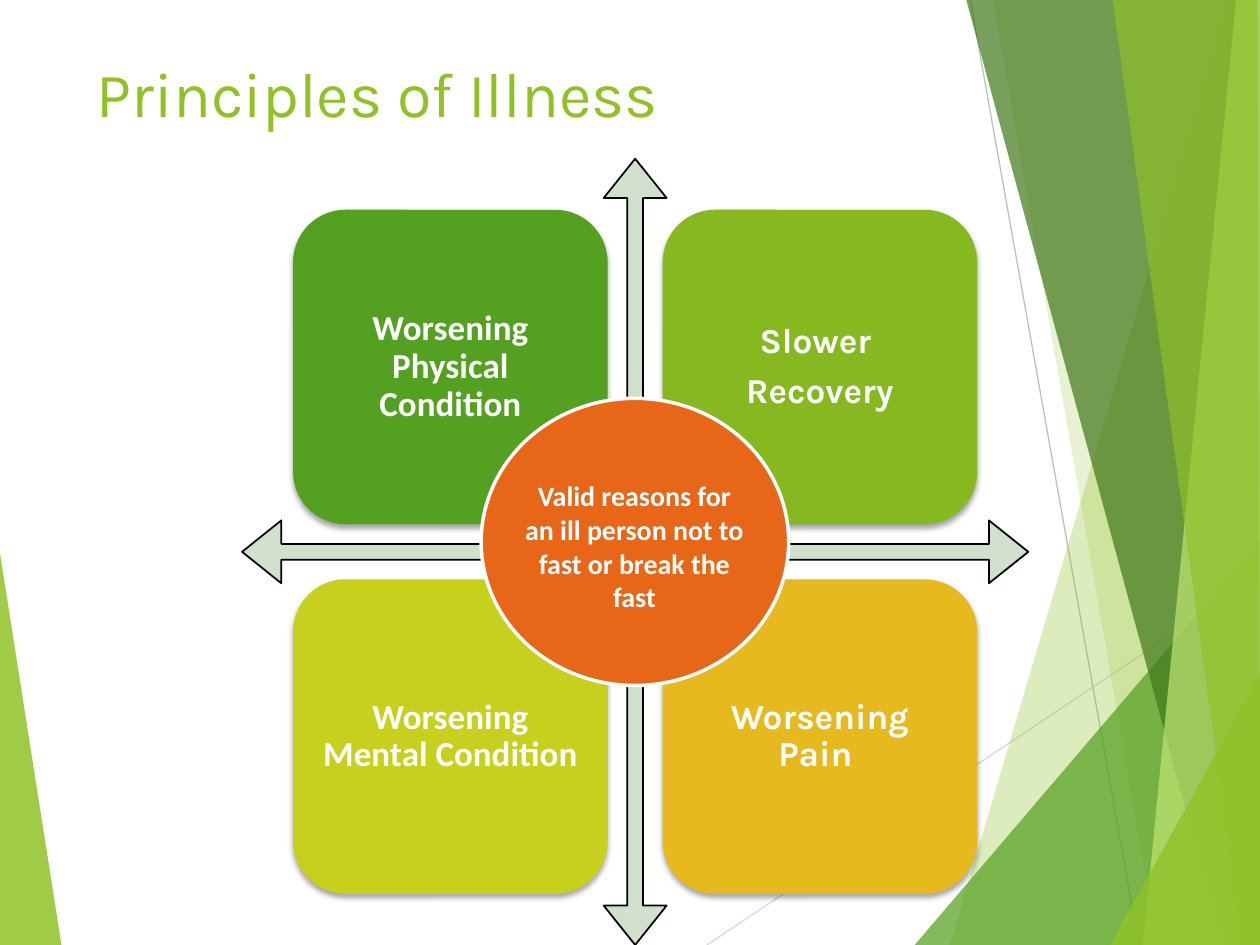
import collections
import pptx
import pptx.dml.color
import pptx.enum.shapes
import pptx.enum.text
import pptx.oxml.ns
import pptx.util
import lxml.etree

Cm = pptx.util.Cm
RGBColor = pptx.dml.color.RGBColor
SHAPE = pptx.enum.shapes.MSO_SHAPE
ANCHOR = pptx.enum.text.MSO_ANCHOR
ALIGN = pptx.enum.text.PP_ALIGN
Box = collections.namedtuple("Box", "left top width height")

WHITE = RGBColor(0xFF, 0xFF, 0xFF)
BLACK = RGBColor(0x00, 0x00, 0x00)
GREEN = RGBColor(0x90, 0xC2, 0x26)
DEEP_GREEN = RGBColor(0x54, 0xA0, 0x21)
FOREST = RGBColor(0x3F, 0x78, 0x19)
PALE_GREEN = RGBColor(0xC0, 0xE4, 0x74)
LEAF = RGBColor(0x86, 0xB8, 0x20)
LIME = RGBColor(0xC7, 0xD0, 0x1D)
GOLD = RGBColor(0xE6, 0xB9, 0x1E)
ORANGE = RGBColor(0xE7, 0x66, 0x18)
SAGE = RGBColor(0xD1, 0xDF, 0xCD)
LIGHT_GREY = RGBColor(0xD9, 0xD9, 0xD9)
GREY = RGBColor(0xBF, 0xBF, 0xBF)

RAYS = [
    (((14.25, 19.05), (25.4, 11.6)), LIGHT_GREY),
    (((19.56, 0), (22.96, 19.05)), GREY),
]
FACETS = [
    (((0, 11.15), (1.24, 19.05), (0, 19.05)), GREEN, 85),
    (((24.77, 0), (19.15, 19.05), (25.4, 19.05), (25.4, 0)), GREEN, 30),
    (((20.02, 0), (23.34, 19.05), (25.4, 19.05), (25.4, 0)), GREEN, 20),
    (((18.44, 19.05), (25.4, 10.9), (25.4, 19.05)), DEEP_GREEN, 72),
    (((19.48, 0), (24.64, 19.05), (25.4, 19.05), (25.4, 0)), FOREST, 70),
    (((24.92, 0), (23.04, 19.05), (25.4, 19.05), (25.4, 0)), PALE_GREEN, 70),
    (((22.43, 0), (25.04, 19.05), (25.4, 19.05), (25.35, 0)), GREEN, 65),
    (((22.38, 19.05), (25.4, 13.59), (25.4, 19.05)), GREEN, 80),
]
TILES = [
    (["Worsening Physical Condition"], "Calibri", DEEP_GREEN, 7),
    (["Slower ", "Recovery"], "Karla", LEAF, 7),
    (["Worsening Mental Condition"], "Calibri", LIME, 7),
    (["Worsening", "Pain "], "Karla", GOLD, 0),
]


def add_xml(parent, tag, **attributes):
    """Append a DrawingML element and return it."""
    element = lxml.etree.SubElement(parent, pptx.oxml.ns.qn("a:" + tag))
    for name, value in attributes.items():
        element.set(name, str(value))
    return element


def put_text(frame, lines, font="Calibri", size=20, color=WHITE, bold=True,
             align=ALIGN.CENTER, anchor=ANCHOR.MIDDLE, spacing=1.0, gap=0, inset=None):
    """Write one paragraph per line in the given format."""
    frame.word_wrap = True
    frame.vertical_anchor = anchor
    if inset is not None:
        frame.margin_left = frame.margin_right = inset
        frame.margin_top = frame.margin_bottom = inset
    for index, line in enumerate(lines):
        para = frame.add_paragraph() if index else frame.paragraphs[0]
        para.alignment = align
        para.line_spacing = spacing
        para.space_before = pptx.util.Pt(0)
        para.space_after = pptx.util.Pt(gap)
        span = para.add_run()
        span.text = line
        span.font.name = font
        span.font.size = pptx.util.Pt(size)
        span.font.bold = bold
        span.font.color.rgb = color


def paint(shape, fill, line=None, width=1):
    """Give a shape a plain fill, an optional outline and no shadow."""
    shape.shadow.inherit = False
    shape.fill.solid()
    shape.fill.fore_color.rgb = fill
    if line is None:
        shape.line.fill.background()
    else:
        shape.line.color.rgb = line
        shape.line.width = pptx.util.Pt(width)


def cast_shadow(shape):
    """Add a soft shadow below a shape."""
    effects = shape._element.spPr.find(pptx.oxml.ns.qn("a:effectLst"))
    shadow = add_xml(effects, "outerShdw", blurRad=pptx.util.Pt(3),
                     dist=pptx.util.Pt(2), dir=5400000, rotWithShape=0)
    color = add_xml(shadow, "srgbClr", val=BLACK)
    add_xml(color, "alpha", val=35000)


def add_backdrop(page, box):
    """Draw the thin rays and the translucent green facets."""
    def place(point):
        return box.left + Cm(point[0]), box.top + Cm(point[1])

    def add_facet(points, color, opacity):
        start, *rest = [place(point) for point in points]
        builder = page.shapes.build_freeform(*start, scale=1.0)
        builder.add_line_segments(rest, close=True)
        facet = builder.convert_to_shape()
        paint(facet, color)
        fill = facet._element.spPr.find(".//" + pptx.oxml.ns.qn("a:srgbClr"))
        add_xml(fill, "alpha", val=opacity * 1000)

    add_facet(*FACETS[0])
    for (start, end), color in RAYS:
        ray = page.shapes.add_connector(
            pptx.enum.shapes.MSO_CONNECTOR.STRAIGHT, *place(start), *place(end))
        ray.line.color.rgb = color
        ray.line.width = pptx.util.Pt(0.75)
        add_xml(ray._element.spPr, "effectLst")
    for facet in FACETS[1:]:
        add_facet(*facet)


def add_title(page, box):
    """Place and format the title placeholder."""
    title = page.shapes.title
    title.left, title.top, title.width, title.height = box
    put_text(title.text_frame, ["Principles of Illness"], font="Karla", size=36,
             color=GREEN, bold=False, align=ALIGN.LEFT, anchor=ANCHOR.TOP)


def add_matrix(page, box):
    """Draw the four-way arrow and its four tiles."""
    arrow = page.shapes.add_shape(SHAPE.QUAD_ARROW, *box)
    for index, value in enumerate((0.02, 0.04, 0.05)):
        arrow.adjustments[index] = value
    paint(arrow, SAGE, BLACK)
    side = int(box.width * 0.4)
    offsets = [int(box.width * share) for share in (0.065, 0.535)]
    for index, (lines, font, color, gap) in enumerate(TILES):
        row, column = divmod(index, 2)
        tile = page.shapes.add_shape(
            SHAPE.ROUNDED_RECTANGLE, box.left + offsets[column],
            box.top + offsets[row], side, side)
        paint(tile, color)
        cast_shadow(tile)
        put_text(tile.text_frame, lines, font=font, spacing=0.9, gap=gap, inset=Cm(0.21))


def add_hub(page, box):
    """Draw the central ellipse with its caption."""
    hub = page.shapes.add_shape(SHAPE.OVAL, *box)
    paint(hub, ORANGE, WHITE, 2)
    caption = page.shapes.add_textbox(
        box.left + Cm(0.59), box.top + Cm(1.5), Cm(5), Cm(3))
    put_text(caption.text_frame,
             ["Valid reasons for an ill person not to fast or break the fast"],
             size=16, anchor=ANCHOR.TOP)


def main():
    """Build the slide and save it."""
    deck = pptx.Presentation()
    deck.slide_width, deck.slide_height = Cm(25.4), Cm(19.05)
    page = deck.slides.add_slide(deck.slide_layouts[5])
    add_backdrop(page, Box(0, 0, deck.slide_width, deck.slide_height))
    add_title(page, Box(Cm(1.7), Cm(0.97), Cm(19.41), Cm(3.66)))
    add_matrix(page, Box(Cm(4.88), Cm(3.2), Cm(15.85), Cm(15.85)))
    add_hub(page, Box(Cm(9.7), Cm(8.03), Cm(6.2), Cm(5.79)))
    deck.save("out.pptx")


if __name__ == "__main__":
    main()
